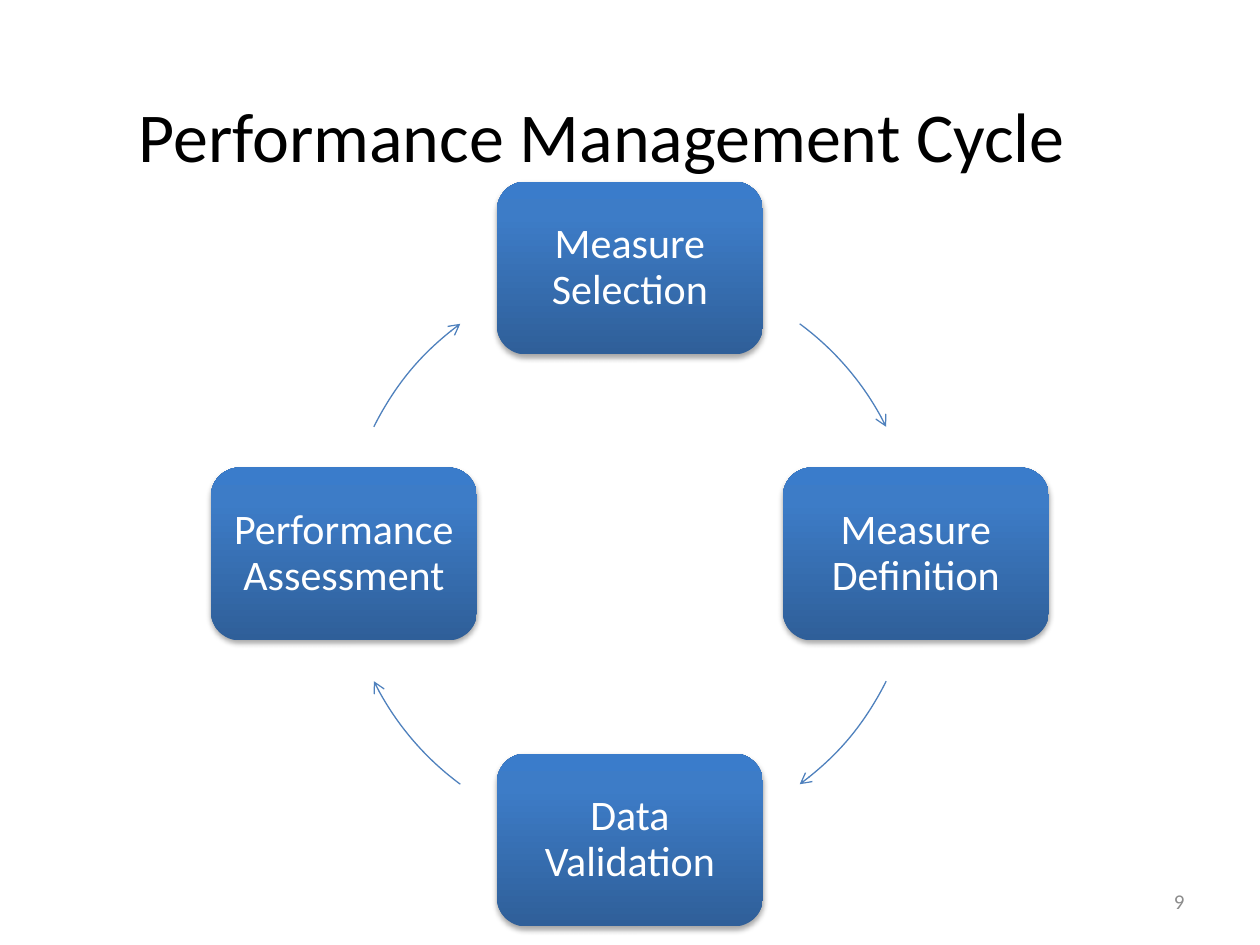
import copy

from lxml import etree
from pptx import Presentation
from pptx import util as u
from pptx.dml.color import RGBColor
from pptx.enum import shapes, text
from pptx.oxml import ns

PX = 914400 / 126
COLORS = {
    "title": "000000", "label": "FFFFFF", "number": "8C8C8C", "arrow": "4F81BD",
    "bottom": "2F5F99", "middle": "3D7CC7", "top": "3A7CCB", "shadow": "000000",
}
FONT = "Calibri"
CENTER_X, CENTER_Y, RADIUS = 630, 554, 286
BOX_W, BOX_H = 266, 173
# Label and direction from the centre, clockwise from the top
STEPS = [
    ("Measure Selection", 0, -1),
    ("Measure Definition", 1, 0),
    ("Data Validation", 0, 1),
    ("Performance Assessment", -1, 0),
]
# Start and end in degrees, clockwise from the right, of the gaps between boxes
ARCS = [(-53.6, -26.4), (26.4, 53.6), (126.4, 153.6), (206.4, 233.6)]


def color(name):
    return RGBColor.from_string(COLORS[name])


def add_xml(parent, tag, **attrs):
    return etree.SubElement(parent, ns.qn(tag), attrs)


class Deck:
    def __init__(self):
        self.prs = Presentation()
        self.prs.slide_width, self.prs.slide_height = u.Inches(10), u.Inches(7.5)
        self.slide = self.prs.slides.add_slide(self.prs.slide_layouts[5])

    def emu(self, *lengths):
        return [round(n * PX) for n in lengths]

    def set_text(self, sp, words, size, name, align):
        tf = sp.text_frame
        tf.text = words
        tf.word_wrap = True
        tf.vertical_anchor = text.MSO_ANCHOR.MIDDLE
        p = tf.paragraphs[0]
        p.alignment = align
        font = p.runs[0].font
        font.name, font.size = FONT, u.Pt(size)
        font.color.rgb = color(name)
        return p

    def title(self, words, *box):
        sp = self.slide.shapes.title
        sp.left, sp.top, sp.width, sp.height = self.emu(*box)
        self.set_text(sp, words, 40, "title", text.PP_ALIGN.LEFT)

    def step(self, words, x, y):
        """Add a rounded box centred on x, y."""
        sp = self.slide.shapes.add_shape(
            shapes.MSO_SHAPE.ROUNDED_RECTANGLE,
            *self.emu(x - BOX_W / 2, y - BOX_H / 2, BOX_W, BOX_H))
        sp.line.fill.background()
        self.shade(sp)
        self.cast_shadow(sp)
        tf = sp.text_frame
        tf.margin_left = tf.margin_right = tf.margin_top = tf.margin_bottom = u.Inches(0.1)
        p = self.set_text(sp, words, 24, "label", text.PP_ALIGN.CENTER)
        p.line_spacing = 0.9

    def shade(self, sp):
        """Fill with the three-stop gradient, running upwards."""
        sp.fill.gradient()
        sp.fill.gradient_angle = 90
        stops = sp._element.spPr.find(ns.qn("a:gradFill")).find(ns.qn("a:gsLst"))
        stops.append(copy.deepcopy(stops[-1]))
        parts = [(0, "bottom"), (0.8, "middle"), (1, "top")]
        for stop, (position, name) in zip(sp.fill.gradient_stops, parts):
            stop.position = position
            stop.color.rgb = color(name)

    def cast_shadow(self, sp):
        sp.shadow.inherit = False
        effects = sp._element.spPr.find(ns.qn("a:effectLst"))
        shadow = add_xml(effects, "a:outerShdw", blurRad=str(u.Pt(3.1)),
                         dist=str(u.Pt(1.8)), dir="5400000", rotWithShape="0")
        add_xml(add_xml(shadow, "a:srgbClr", val=COLORS["shadow"]), "a:alpha", val="35000")

    def arc(self, start, end):
        """Add an arrow along the circle between two angles in degrees."""
        sp = self.slide.shapes.add_shape(
            shapes.MSO_SHAPE.ARC,
            *self.emu(CENTER_X - RADIUS, CENTER_Y - RADIUS, 2 * RADIUS, 2 * RADIUS))
        # Adjustments count in 100000ths, angles in 60000ths of a degree
        sp.adjustments[0], sp.adjustments[1] = start % 360 * 0.6, end % 360 * 0.6
        sp.shadow.inherit = False
        sp.fill.background()
        sp.line.color.rgb = color("arrow")
        sp.line.width = u.Pt(0.75)
        add_xml(sp._element.spPr.find(ns.qn("a:ln")), "a:tailEnd", type="arrow")

    def number(self, words, *box):
        sp = self.slide.shapes.add_textbox(*self.emu(*box))
        self.set_text(sp, words, 12, "number", text.PP_ALIGN.RIGHT)


def main():
    deck = Deck()
    deck.title("Performance Management Cycle", 126, 55, 1071, 158)
    for (words, dx, dy), (start, end) in zip(STEPS, ARCS):
        deck.step(words, CENTER_X + dx * RADIUS, CENTER_Y + dy * RADIUS)
        deck.arc(start, end)
    deck.number("9", 903, 876, 294, 50)
    deck.prs.save("out.pptx")


if __name__ == "__main__":
    main()
